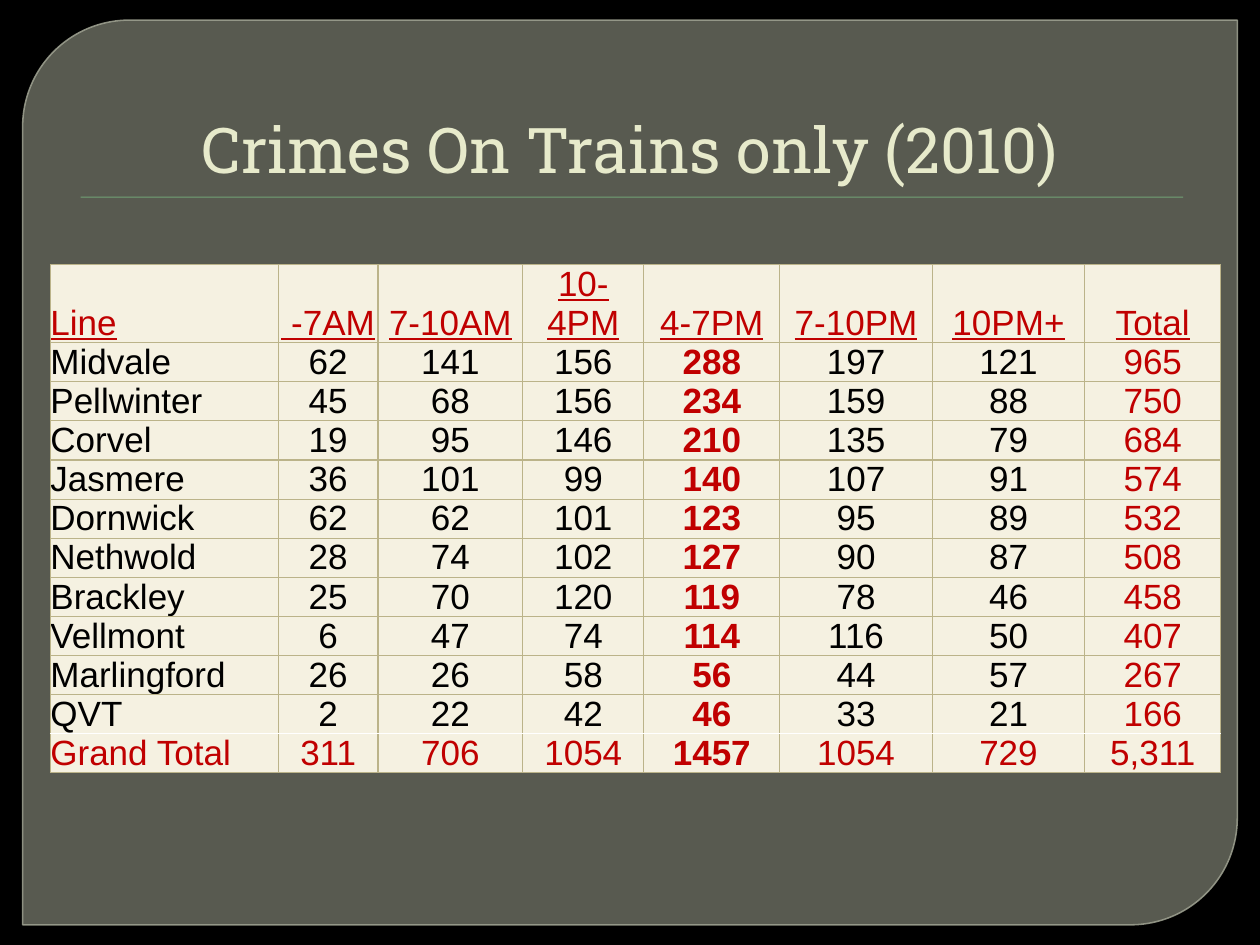
import pptx
import pptx.dml.color
import pptx.enum.shapes
import pptx.enum.text
import pptx.oxml
import pptx.oxml.ns
import pptx.util
import lxml.etree

Inches = pptx.util.Inches
Align = pptx.enum.text.PP_ALIGN
Anchor = pptx.enum.text.MSO_ANCHOR
Shape = pptx.enum.shapes.MSO_SHAPE

HEADINGS = ["Line", " -7AM", "7-10AM", "10-4PM", "4-7PM", "7-10PM", "10PM+", "Total"]
CRIMES = [
    ["Midvale", 62, 141, 156, 288, 197, 121, 965],
    ["Pellwinter", 45, 68, 156, 234, 159, 88, 750],
    ["Corvel", 19, 95, 146, 210, 135, 79, 684],
    ["Jasmere", 36, 101, 99, 140, 107, 91, 574],
    ["Dornwick", 62, 62, 101, 123, 95, 89, 532],
    ["Nethwold", 28, 74, 102, 127, 90, 87, 508],
    ["Brackley", 25, 70, 120, 119, 78, 46, 458],
    ["Vellmont", 6, 47, 74, 114, 116, 50, 407],
    ["Marlingford", 26, 26, 58, 56, 44, 57, 267],
    ["QVT", 2, 22, 42, 46, 33, 21, 166],
]
GRAND_TOTAL = ["Grand Total", 311, 706, 1054, 1457, 1054, 729, "5,311"]
COLUMN_WIDTHS = [1.81, 0.79, 1.15, 0.96, 1.08, 1.21, 1.21, 1.08]
PEAK_COLUMN = HEADINGS.index("4-7PM")


def colour(value):
    return pptx.dml.color.RGBColor.from_string(value)


def write(frame, text, font="Arial", size=20, ink="000000", align=Align.LEFT,
          bold=False, underline=False):
    para = frame.paragraphs[0]
    para.alignment = align
    span = para.add_run()
    span.text = text
    span.font.name = font
    span.font.size = pptx.util.Pt(size)
    span.font.color.rgb = colour(ink)
    span.font.bold = bold
    span.font.underline = underline
    return para


def add_alpha(fill_holder, percent):
    """Make the first solid colour found below an element see-through."""
    shade = fill_holder.find(".//" + pptx.oxml.ns.qn("a:srgbClr"))
    alpha = lxml.etree.SubElement(shade, pptx.oxml.ns.qn("a:alpha"))
    alpha.set("val", str(percent * 1000))


def add_border(cell, side, ink, width):
    cell.fill.background()
    properties = cell._tc.tcPr
    border = pptx.oxml.parse_xml(
        f'<a:ln{side} {pptx.oxml.ns.nsdecls("a")} w="{pptx.util.Pt(width)}">'
        f'<a:solidFill><a:srgbClr val="{ink}"/></a:solidFill></a:ln{side}>')
    properties.insert(len(properties) - 1, border)


class Slide:
    red, grid, cream = "C00000", "BBB389", "F5F1E1"

    def __init__(self, deck):
        self.page = deck.slides.add_slide(deck.slide_layouts[5])
        background = self.page.background.fill
        background.solid()
        background.fore_color.rgb = colour("000000")

    def shape(self, kind, left, top, width, height, fill):
        box = self.page.shapes.add_shape(
            kind, Inches(left), Inches(top), Inches(width), Inches(height))
        box.shadow.inherit = False
        box.fill.solid()
        box.fill.fore_color.rgb = colour(fill)
        box.line.fill.background()
        return box

    def panel(self):
        box = self.shape(Shape.ROUND_2_DIAG_RECTANGLE, 0.18, 0.16, 9.64, 7.18, "888B7B")
        box.adjustments[0] = 0.118
        box.adjustments[1] = 0
        add_alpha(box.element.spPr, 65)
        box.line.color.rgb = colour("9DA090")
        box.line.width = pptx.util.Pt(0.87)
        add_alpha(box.line._ln, 88)

    def title(self, text):
        box = self.page.shapes.title
        box.left, box.top = Inches(0.22), Inches(0.28)
        box.width, box.height = Inches(9.5), Inches(1.25)
        frame = box.text_frame
        frame.vertical_anchor = Anchor.BOTTOM
        frame.auto_size = pptx.enum.text.MSO_AUTO_SIZE.NONE
        para = write(frame, text, font="Roboto Slab", size=36, ink="E7EACB",
                     align=Align.CENTER)
        para._p.get_or_add_pPr().set("marL", str(Inches(0.06)))
        # Bring the title in front of the panel
        box.element.getparent().append(box.element)

    def table(self, rows, widths, left, top, row_height):
        frame = self.page.shapes.add_table(
            len(rows), len(widths), Inches(left), Inches(top),
            Inches(sum(widths)), Inches(row_height * (len(rows) + 1)))
        table = frame.table
        for column, width in zip(table.columns, widths):
            column.width = Inches(width)
        last = len(rows) - 1
        for r, values in enumerate(rows):
            # The heading row holds two lines of text
            table.rows[r].height = Inches(row_height * (2 if r == 0 else 1))
            for c, value in enumerate(values):
                self.cell(table.cell(r, c), str(value), r, c, last)

    def cell(self, cell, text, r, c, last):
        cell.margin_left = cell.margin_right = 0
        cell.margin_top = cell.margin_bottom = 0
        cell.vertical_anchor = Anchor.BOTTOM
        highlighted = r in (0, last) or c in (PEAK_COLUMN, len(HEADINGS) - 1)
        write(cell.text_frame, text,
              ink=self.red if highlighted else "000000",
              align=Align.CENTER if c else Align.LEFT,
              bold=c == PEAK_COLUMN and r > 0, underline=r == 0)
        # A white line sets off the grand total
        white_side = {last - 1: "B", last: "T"}.get(r)
        for side in "LRTB":
            if side == white_side:
                add_border(cell, side, "FFFFFF", 1)
            else:
                add_border(cell, side, self.grid, 0.75)
        cell.fill.solid()
        cell.fill.fore_color.rgb = colour(self.cream)


def main():
    deck = pptx.Presentation()
    deck.slide_width, deck.slide_height = Inches(10), Inches(7.5)
    slide = Slide(deck)

    # Backdrop and title
    slide.panel()
    slide.shape(Shape.RECTANGLE, 0.64, 1.56, 8.75, 0.01, "72A376")
    slide.title("Crimes On Trains only (2010)")

    # Crimes by line and time of day
    slide.table([HEADINGS, *CRIMES, GRAND_TOTAL], COLUMN_WIDTHS,
                left=0.4, top=2.1, row_height=0.31)

    deck.save("out.pptx")


if __name__ == "__main__":
    main()
